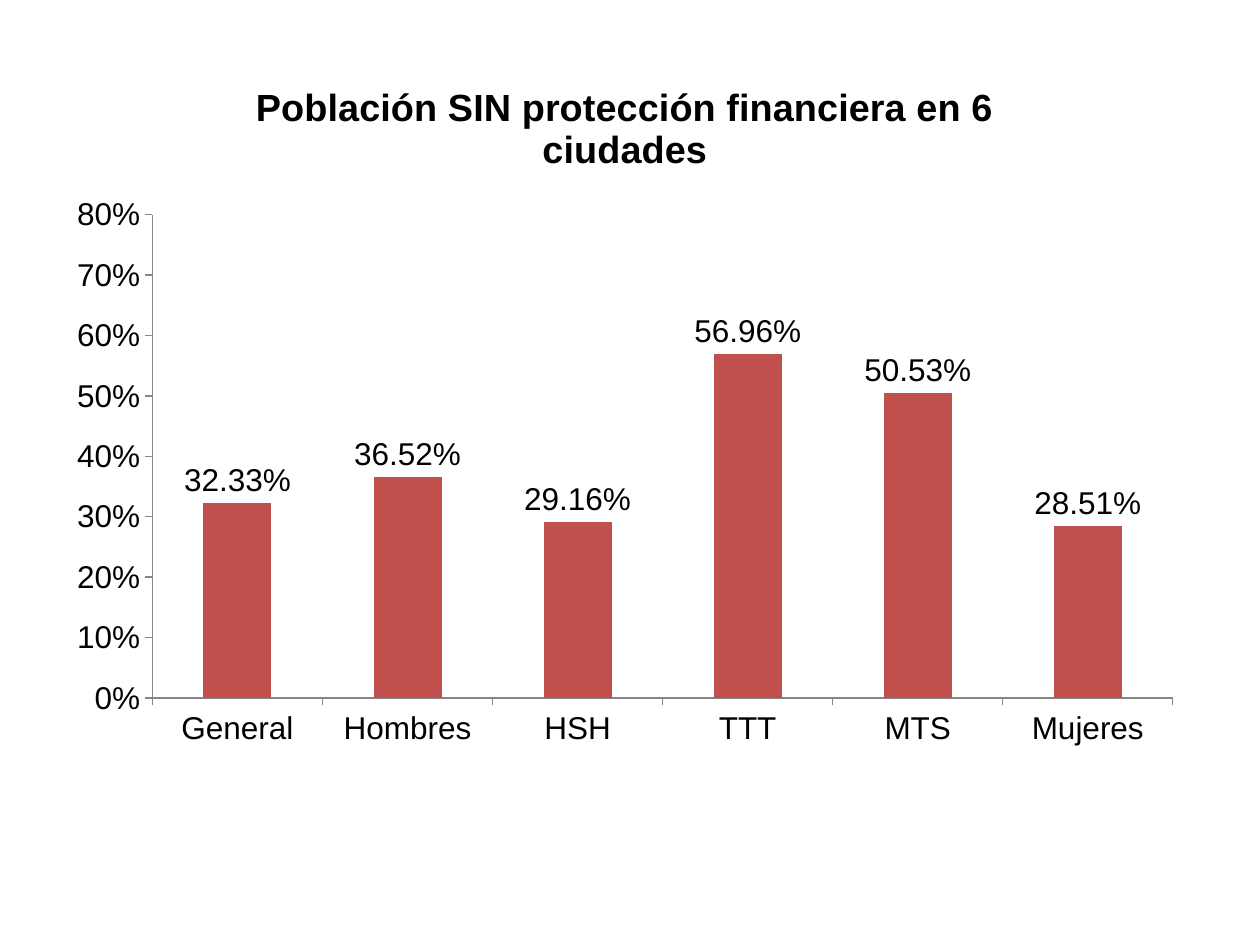
from pptx import Presentation
from pptx.chart.data import CategoryChartData
from pptx.dml.color import RGBColor
from pptx.enum import chart as kinds
from pptx.util import Inches, Pt

BLACK = RGBColor(0x00, 0x00, 0x00)
GREY = RGBColor(0x86, 0x86, 0x86)
RED = RGBColor(0xC0, 0x50, 0x4D)
FONT = "Arial"

TITLE = "Población SIN protección financiera en 6 ciudades"
UNPROTECTED = {
    "General": 0.3233,
    "Hombres": 0.3652,
    "HSH": 0.2916,
    "TTT": 0.5696,
    "MTS": 0.5053,
    "Mujeres": 0.2851,
}


def style_font(font, size, bold=False):
    font.name = FONT
    font.size = Pt(size)
    font.bold = bold
    font.color.rgb = BLACK


def style_axis(axis):
    axis.has_major_gridlines = False
    axis.major_tick_mark = kinds.XL_TICK_MARK.OUTSIDE
    axis.minor_tick_mark = kinds.XL_TICK_MARK.NONE
    axis.format.line.color.rgb = GREY
    axis.format.line.width = Pt(0.75)
    style_font(axis.tick_labels.font, 18)


def add_column_chart(page):
    data = CategoryChartData(number_format="0.00%")
    data.categories = list(UNPROTECTED)
    data.add_series("Series 1", list(UNPROTECTED.values()))
    chart = page.shapes.add_chart(
        kinds.XL_CHART_TYPE.COLUMN_CLUSTERED,
        Inches(0.43), Inches(0.44), Inches(9.06), Inches(5.59), data,
    ).chart
    chart.has_legend = False
    style_font(chart.font, 18)
    return chart


def add_title(chart):
    chart.has_title = True
    chart.chart_title.include_in_layout = False
    frame = chart.chart_title.text_frame
    frame.text = TITLE
    style_font(frame.paragraphs[0].font, 21.6, bold=True)


def style_columns(plot):
    plot.gap_width = 150
    plot.vary_by_categories = False
    columns = plot.series[0]
    columns.invert_if_negative = False
    columns.format.fill.solid()
    columns.format.fill.fore_color.rgb = RED

    # Values above the columns
    labels = columns.data_labels
    labels.show_value = True
    labels.number_format = "0.00%"
    labels.number_format_is_linked = False
    labels.position = kinds.XL_LABEL_POSITION.OUTSIDE_END
    style_font(labels.font, 18)


def main():
    deck = Presentation()
    deck.slide_width, deck.slide_height = Inches(10), Inches(7.5)
    page = deck.slides.add_slide(deck.slide_layouts[6])

    # Chart and title
    chart = add_column_chart(page)
    add_title(chart)
    style_columns(chart.plots[0])

    # Axes
    style_axis(chart.category_axis)
    style_axis(chart.value_axis)
    scale = chart.value_axis
    scale.minimum_scale, scale.maximum_scale, scale.major_unit = 0, 0.8, 0.1
    scale.tick_labels.number_format = "0%"
    scale.tick_labels.number_format_is_linked = False

    deck.save("out.pptx")


if __name__ == "__main__":
    main()
